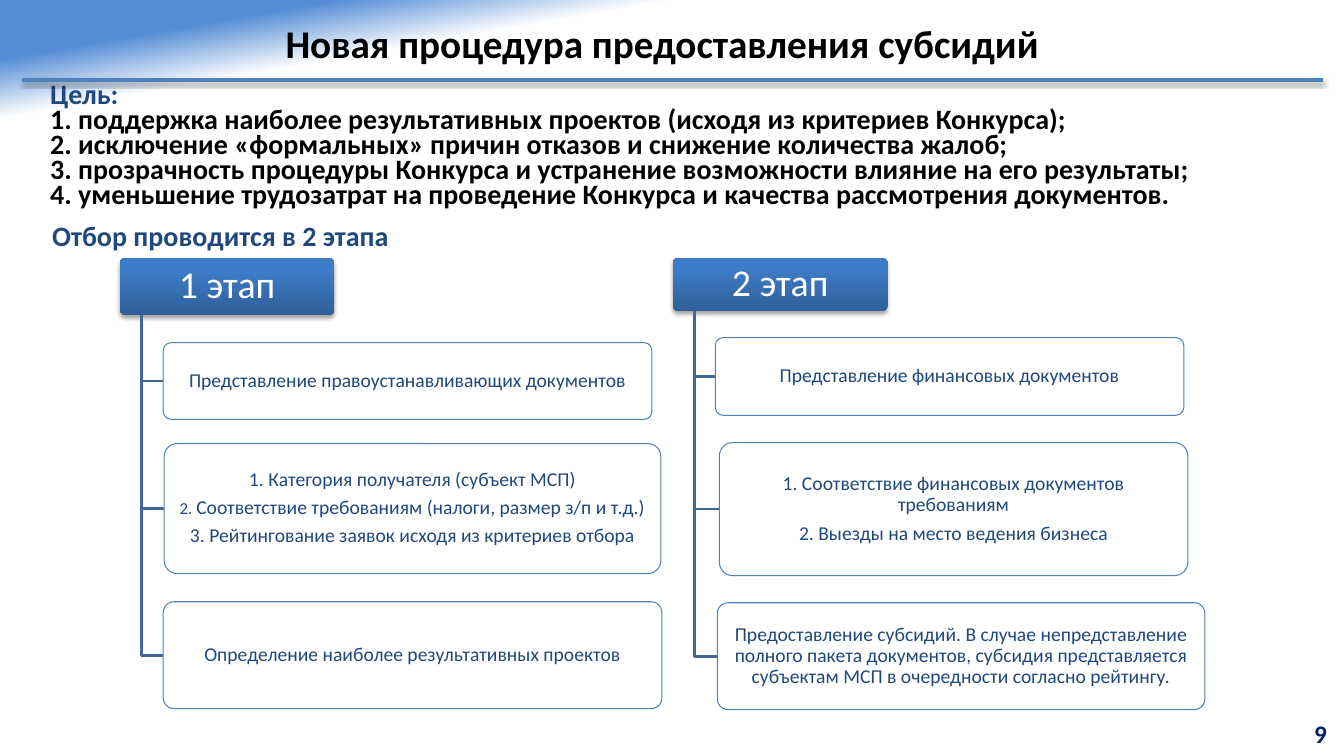
from dataclasses import dataclass
from typing import Optional

import pptx
import pptx.dml.color
import pptx.enum.shapes
import pptx.enum.text
import pptx.oxml
import pptx.oxml.ns
import pptx.util
from pptx.util import Inches

ALIGN = pptx.enum.text.PP_ALIGN
MIDDLE = pptx.enum.text.MSO_ANCHOR.MIDDLE
ROUNDED = pptx.enum.shapes.MSO_SHAPE.ROUNDED_RECTANGLE


# Colours and type sizes
@dataclass(frozen=True)
class Theme:
    font: str = "Calibri"
    black: str = "000000"
    white: str = "FFFFFF"
    navy: str = "1F497D"
    number: str = "022463"
    accent: str = "4F81BD"
    branch: str = "3F6797"
    sky: str = "558ED5"
    stage_dark: str = "2F5F99"
    stage_light: str = "3D7CC7"
    title_size: float = 28
    stage_size: float = 27
    goal_size: float = 20
    number_size: float = 18
    step_size: float = 14
    small_size: float = 12


THEME = Theme()


@dataclass(frozen=True)
class Rect:
    left: float
    top: float
    width: float
    height: float

    def lengths(self) -> tuple:
        return tuple(Inches(v) for v in (self.left, self.top, self.width, self.height))


@dataclass(frozen=True)
class Line:
    text: str
    marker: str = ""  # smaller lead-in


@dataclass(frozen=True)
class Step:
    rect: Rect
    lines: tuple


@dataclass(frozen=True)
class Stage:
    name: str
    rect: Rect
    steps: tuple


# Content
GOALS = (
    "1. поддержка наиболее результативных проектов (исходя из критериев Конкурса);",
    "2. исключение «формальных» причин отказов и снижение количества жалоб;",
    "3. прозрачность процедуры Конкурса и устранение возможности влияние на его результаты;",
    "4. уменьшение трудозатрат на проведение Конкурса и качества рассмотрения документов.",
)
STAGES = (
    Stage("1 этап", Rect(1.19, 2.56, 2.13, 0.57), (
        Step(Rect(1.62, 3.4, 4.85, 0.76),
             (Line("Представление правоустанавливающих документов"),)),
        Step(Rect(1.63, 4.4, 4.93, 1.29),
             (Line("1. Категория получателя (субъект МСП)"),
              Line("Соответствие требованиям (налоги, размер з/п и т.д.)", "2. "),
              Line("3. Рейтингование заявок исходя из критериев отбора"))),
        Step(Rect(1.62, 5.97, 4.95, 1.06),
             (Line("Определение наиболее результативных проектов"),)),
    )),
    Stage("2 этап", Rect(6.68, 2.56, 2.13, 0.53), (
        Step(Rect(7.1, 3.35, 4.65, 0.77),
             (Line("Представление финансовых документов"),)),
        Step(Rect(7.14, 4.39, 4.65, 1.32),
             (Line("1. Соответствие финансовых документов требованиям"),
              Line("2. Выезды на место ведения бизнеса"))),
        Step(Rect(7.12, 5.98, 4.84, 1.06),
             (Line("Предоставление субсидий. В случае непредставление полного пакета "
                   "документов, субсидия представляется субъектам МСП в очередности "
                   "согласно рейтингу."),)),
    )),
)


# Helpers
def rgb(value: str) -> pptx.dml.color.RGBColor:
    return pptx.dml.color.RGBColor.from_string(value)


def add_span(para, text: str, *, size: float, color: str, bold: bool = False) -> None:
    span = para.add_run()
    span.text = text
    span.font.name = THEME.font
    span.font.size = pptx.util.Pt(size)
    span.font.bold = bold
    span.font.color.rgb = rgb(color)


def add_para(frame, align, spacing=None, after: Optional[float] = None):
    para = frame.paragraphs[0]
    if para.runs:
        para = frame.add_paragraph()
    para.alignment = align
    if spacing is not None:
        para.line_spacing = spacing
    if after is not None:
        para.space_after = pptx.util.Pt(after)
    return para


def add_text_box(page, rect: Rect):
    frame = page.shapes.add_textbox(*rect.lengths()).text_frame
    frame.word_wrap = True
    return frame


def set_gradient(fill, stops: tuple, angle: float) -> None:
    fill.gradient()
    fill.gradient_angle = angle
    for stop, (position, color) in zip(fill.gradient_stops, stops):
        stop.position = position
        stop.color.rgb = rgb(color)


def set_effects(item, shadow: bool) -> None:
    outer = ('<a:outerShdw blurRad="39370" dist="22860" dir="5400000" rotWithShape="0">'
             '<a:srgbClr val="000000"><a:alpha val="35000"/></a:srgbClr></a:outerShdw>')
    xml = f'<a:effectLst {pptx.oxml.ns.nsdecls("a")}>{outer if shadow else ""}</a:effectLst>'
    item._element.spPr.append(pptx.oxml.parse_xml(xml))


def add_panel(page, rect: Rect):
    panel = page.shapes.add_shape(ROUNDED, *rect.lengths())
    panel.adjustments[0] = 0.1
    frame = panel.text_frame
    frame.word_wrap = True
    frame.vertical_anchor = MIDDLE
    frame.margin_left = frame.margin_right = Inches(0.1)
    frame.margin_top = frame.margin_bottom = Inches(0.05)
    return panel


def add_branch(page, start: Rect, end: Rect) -> None:
    x, y = start.left + start.width / 10, start.top + start.height
    middle = end.top + end.height / 2
    builder = page.shapes.build_freeform(Inches(x), Inches(y))
    builder.add_line_segments(
        [(Inches(x), Inches(middle)), (Inches(end.left), Inches(middle))], close=False)
    branch = builder.convert_to_shape()
    branch.fill.background()
    branch.line.color.rgb = rgb(THEME.branch)
    branch.line.width = pptx.util.Pt(2)
    branch.shadow.inherit = False


def add_step(page, step: Step) -> None:
    panel = add_panel(page, step.rect)
    panel.fill.solid()
    panel.fill.fore_color.rgb = rgb(THEME.white)
    panel.line.color.rgb = rgb(THEME.accent)
    panel.line.width = pptx.util.Pt(0.75)
    panel.shadow.inherit = False
    for line in step.lines:
        para = add_para(panel.text_frame, ALIGN.CENTER, 0.9, 4.9)
        if line.marker:
            add_span(para, line.marker, size=THEME.small_size, color=THEME.navy)
        add_span(para, line.text, size=THEME.step_size, color=THEME.navy)


def add_stage(page, stage: Stage) -> None:
    header = add_panel(page, stage.rect)
    set_gradient(header.fill, ((0, THEME.stage_dark), (0.8, THEME.stage_light)), 90)
    header.line.fill.background()
    set_effects(header, shadow=True)
    add_span(add_para(header.text_frame, ALIGN.CENTER, 0.9), stage.name,
             size=THEME.stage_size, color=THEME.white)
    for step in stage.steps:
        add_branch(page, stage.rect, step.rect)
        add_step(page, step)


def main() -> None:
    deck = pptx.Presentation()
    deck.slide_width, deck.slide_height = Inches(13.34), Inches(7.48)
    page = deck.slides.add_slide(deck.slide_layouts[5])
    set_gradient(page.background.fill, ((0.06, THEME.sky), (0.12, THEME.white)), 280)

    # Title
    title = page.shapes.title
    title.left, title.top, title.width, title.height = Rect(0.52, 0.15, 12.1, 0.55).lengths()
    title.text_frame.vertical_anchor = MIDDLE
    add_span(add_para(title.text_frame, ALIGN.CENTER), "Новая процедура предоставления субсидий",
             size=THEME.title_size, color=THEME.black, bold=True)

    # Goals
    goals = add_text_box(page, Rect(0.4, 0.79, 12.35, 1.36))
    for text in ("Цель:", *GOALS):
        add_span(add_para(goals, ALIGN.JUSTIFY, pptx.util.Pt(18)), text, size=THEME.goal_size,
                 color=THEME.black if text in GOALS else THEME.navy, bold=True)

    # Two stages
    intro = add_text_box(page, Rect(0.42, 2.12, 12.01, 0.44))
    add_span(add_para(intro, ALIGN.LEFT), "Отбор проводится в 2 этапа",
             size=THEME.goal_size, color=THEME.navy, bold=True)
    for stage in STAGES:
        add_stage(page, stage)

    # Title rule and page number
    rule = page.shapes.add_connector(pptx.enum.shapes.MSO_CONNECTOR.STRAIGHT, Inches(0.22),
                                     Inches(0.79), Inches(13.13), Inches(0.79))
    rule.line.color.rgb = rgb(THEME.accent)
    rule.line.width = pptx.util.Pt(3)
    set_effects(rule, shadow=True)
    number = add_text_box(page, Rect(10.21, 7.12, 3.06, 0.31))
    number.vertical_anchor = MIDDLE
    add_span(add_para(number, ALIGN.RIGHT), "9",
             size=THEME.number_size, color=THEME.number, bold=True)

    deck.save("out.pptx")


if __name__ == "__main__":
    main()
